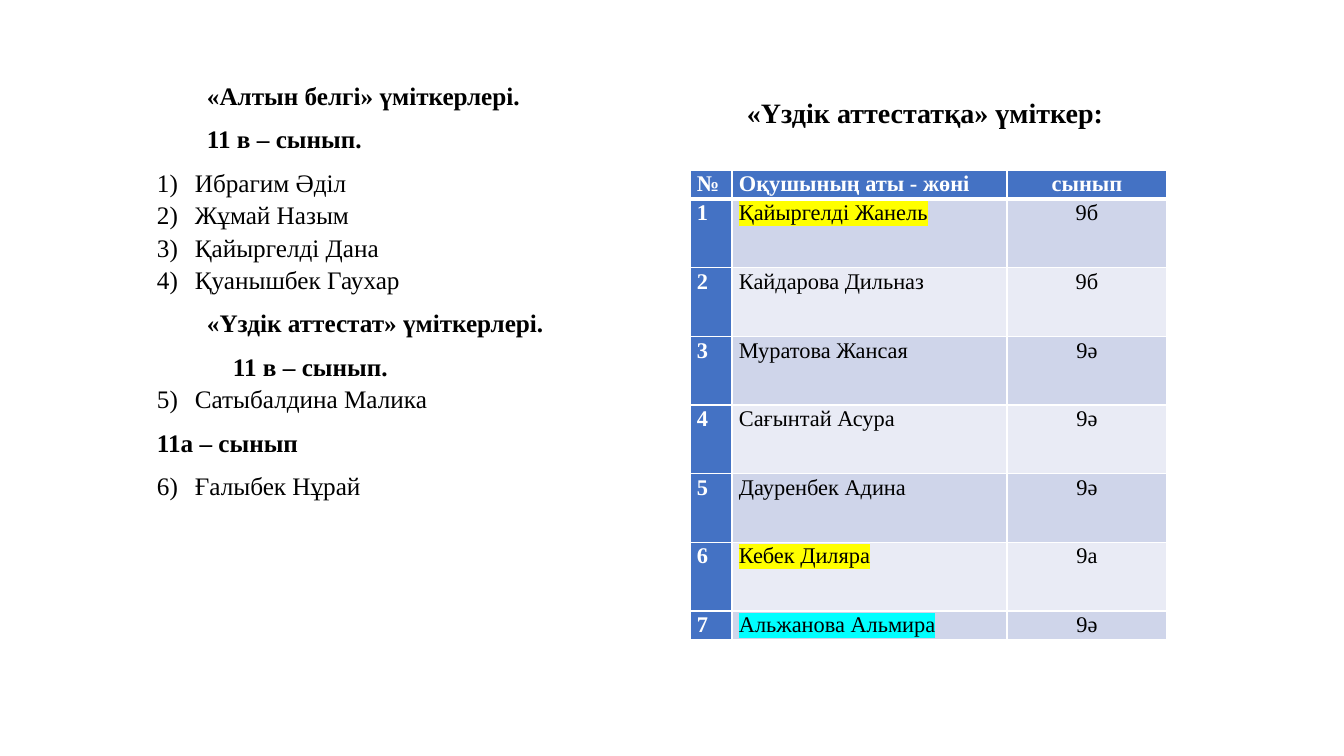
"""Build the slide listing the certificate candidates."""
from lxml.etree import SubElement
from pptx import Presentation
from pptx.dml.color import RGBColor
from pptx.enum.text import MSO_ANCHOR, PP_ALIGN
from pptx.oxml import parse_xml
from pptx.oxml.ns import nsdecls, qn
from pptx.util import Pt

PX = 9071
FONT = "Times New Roman"
BLACK = RGBColor(0x00, 0x00, 0x00)
WHITE = RGBColor(0xFF, 0xFF, 0xFF)
BLUE = RGBColor(0x44, 0x72, 0xC4)
BANDS = RGBColor(0xCF, 0xD5, 0xEA), RGBColor(0xE9, 0xEB, 0xF5)
YELLOW = RGBColor(0xFF, 0xFF, 0x00)
CYAN = RGBColor(0x00, 0xFF, 0xFF)

CANDIDATES = [
    ("«Алтын белгі» үміткерлері.", None, 0, 50, 8),
    ("11 в – сынып.", None, 0, 50, 8),
    ("Ибрагим Әділ", 1, 38, -38, 0),
    ("Жұмай Назым", 1, 38, -38, 0),
    ("Қайыргелді Дана", 1, 38, -38, 0),
    ("Қуанышбек Гаухар", 1, 38, -38, 8),
    ("«Үздік аттестат» үміткерлері.", None, 50, 0, 8),
    ("11 в – сынып.", None, 76, 0, 0),
    ("Сатыбалдина Малика", 5, 38, -38, 8),
    ("11а – сынып", None, 0, 0, 8),
    ("Ғалыбек Нұрай", 6, 38, -38, 8),
]
HEADER = "№", "Оқушының аты - жөні", "сынып"
PUPILS = [
    ("Қайыргелді Жанель", "9б"),
    ("Кайдарова Дильназ", "9б"),
    ("Муратова Жансая", "9ә"),
    ("Сағынтай Асура", "9ә"),
    ("Дауренбек Адина", "9ә"),
    ("Кебек Диляра", "9а"),
    ("Альжанова Альмира", "9ә"),
]
HIGHLIGHTS = {1: YELLOW, 6: YELLOW, 7: CYAN}


def px(length):
    """Turn pixels into EMU."""
    return length * PX


def write(paragraph, text, size, color, bold):
    """Fill a paragraph with one formatted run and return the run."""
    paragraph.text = text
    run = paragraph.runs[0]
    run.font.name = FONT
    run.font.size = Pt(size)
    run.font.bold = bold
    run.font.color.rgb = color
    return run


def highlight(run, color):
    """Put a marker colour behind a run."""
    marker = parse_xml(f'<a:highlight {nsdecls("a")}><a:srgbClr val="{color}"/></a:highlight>')
    run.font._element.find(qn("a:solidFill")).addnext(marker)


def add_text_box(slide, left, top, width, height, wrap=True):
    """Add an empty text box and return its text frame."""
    text_frame = slide.shapes.add_textbox(px(left), px(top), px(width), px(height)).text_frame
    text_frame.word_wrap = wrap
    return text_frame


def add_candidates(slide):
    """Add the headings and numbered names on the left."""
    text_frame = add_text_box(slide, 147, 73, 672, 435)
    for index, (text, start, margin, indent, after) in enumerate(CANDIDATES):
        paragraph = text_frame.add_paragraph() if index else text_frame.paragraphs[0]
        write(paragraph, text, 18, BLACK, start is None)
        paragraph.line_spacing = 1.07
        paragraph.space_after = Pt(after)
        properties = paragraph._p.get_or_add_pPr()
        properties.set("marL", str(px(margin)))
        properties.set("indent", str(px(indent)))
        if start:
            numbering = SubElement(properties, qn("a:buAutoNum"), type="arabicParenR")
            if start > 1:
                numbering.set("startAt", str(start))


def set_borders(cell, top, bottom):
    """Draw white borders with the given top and bottom widths in points."""
    properties = cell._tc.get_or_add_tcPr()
    widths = {"lnL": 1, "lnR": 1, "lnT": top, "lnB": bottom}
    for index, (side, width) in enumerate(widths.items()):
        properties.insert(index, parse_xml(
            f'<a:{side} {nsdecls("a")} w="{Pt(width)}"><a:solidFill>'
            f'<a:srgbClr val="{WHITE}"/></a:solidFill></a:{side}>'))


def fill_cell(cell, text, row, column):
    """Write and format one table cell, returning its run."""
    is_label = row == 0 or column == 0
    cell.margin_left = cell.margin_right = px(7)
    cell.margin_top = cell.margin_bottom = 0
    cell.fill.solid()
    cell.fill.fore_color.rgb = BLUE if is_label else BANDS[(row - 1) % 2]
    set_borders(cell, 3 if row == 1 else 1, 3 if row == 0 else 1)
    paragraph = cell.text_frame.paragraphs[0]
    run = write(paragraph, text, 16, WHITE if is_label else BLACK, is_label)
    paragraph.alignment = PP_ALIGN.CENTER if column == 2 else PP_ALIGN.LEFT
    paragraph.line_spacing = 1.07
    paragraph.space_after = Pt(8)
    return run


def add_pupil_table(slide):
    """Add the numbered table of pupils and classes."""
    rows = [HEADER] + [(str(number), *pupil) for number, pupil in enumerate(PUPILS, 1)]
    table = slide.shapes.add_table(len(rows), 3, px(690), px(170), px(477), px(470)).table
    for column, width in zip(table.columns, (42, 275, 160)):
        column.width = px(width)
    for row, values in enumerate(rows):
        is_edge = row in (0, len(rows) - 1)
        table.rows[row].height = px(29) if is_edge else px(412) // 6
        for column, text in enumerate(values):
            run = fill_cell(table.cell(row, column), text, row, column)
            if column == 1 and row in HIGHLIGHTS:
                highlight(run, HIGHLIGHTS[row])


def add_table_title(slide):
    """Add the title above the table."""
    text_frame = add_text_box(slide, 737, 90, 382, 44, wrap=False)
    text_frame.vertical_anchor = MSO_ANCHOR.MIDDLE
    write(text_frame.paragraphs[0], "«Үздік аттестатқа» үміткер:", 20, BLACK, True)


def main():
    """Build and save the presentation."""
    presentation = Presentation()
    presentation.slide_width = px(1344)
    presentation.slide_height = px(756)
    slide = presentation.slides.add_slide(presentation.slide_layouts[6])
    add_candidates(slide)
    add_pupil_table(slide)
    add_table_title(slide)
    presentation.save("out.pptx")


if __name__ == "__main__":
    main()
